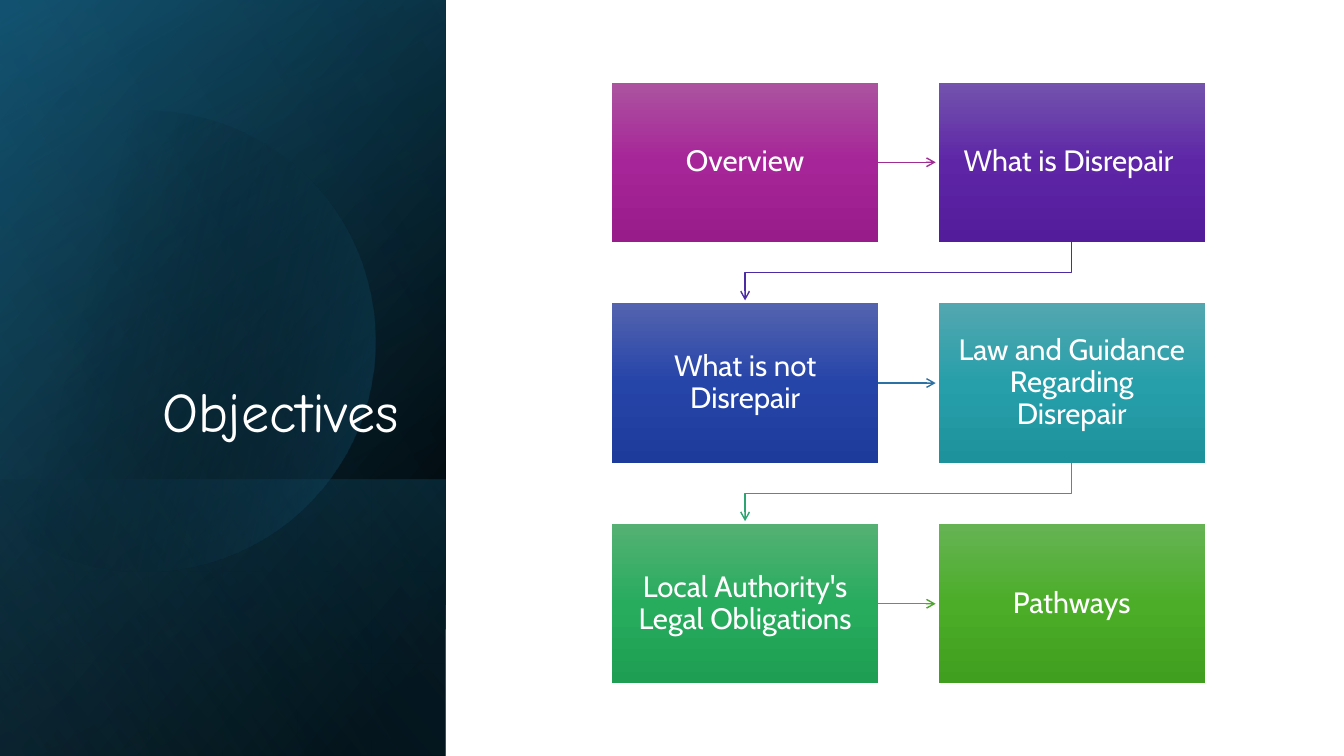
from dataclasses import dataclass
from lxml.etree import SubElement
from pptx import Presentation
from pptx.dml.color import RGBColor
from pptx.enum.shapes import MSO_CONNECTOR, MSO_SHAPE
from pptx.enum.text import MSO_ANCHOR, PP_ALIGN
from pptx.oxml.ns import qn
from pptx.util import Inches, Pt


@dataclass(frozen=True)
class Theme:
    white: str = "FFFFFF"
    black: str = "000000"
    navy: str = "104862"
    teal: str = "156082"
    sky: str = "46B1E1"
    title_font: str = "Comic Neue"
    title_size: int = 40
    body_font: str = "Cabin"
    body_size: int = 21
    line_width: int = 1


class Grid:
    """Two columns by three rows of boxes, in inches."""
    left, top = 6.07, 0.82
    box_w, box_h = 2.64, 1.58
    col_step, row_step = 3.24, 2.19
    tip_gap = 0.03

    def cell(self, i):
        row, col = divmod(i, 2)
        return self.left + col * self.col_step, self.top + row * self.row_step


class SlideBuilder:
    def __init__(self, slide, theme, grid):
        self.s, self.theme, self.grid = slide, theme, grid

    def gradient(self, sp, stops, angle):
        """Stops are (position %, colour, opacity %)."""
        sp.shadow.inherit = False
        sp.line.fill.background()
        sp.fill.background()
        old = sp.element.spPr.find(qn("a:noFill"))
        grad = old.makeelement(qn("a:gradFill"), {"rotWithShape": "1"})
        gs_lst = SubElement(grad, qn("a:gsLst"))
        for pos, colour, opacity in stops:
            gs = SubElement(gs_lst, qn("a:gs"), pos=str(pos * 1000))
            clr = SubElement(gs, qn("a:srgbClr"), val=colour)
            if opacity < 100:
                SubElement(clr, qn("a:alpha"), val=str(opacity * 1000))
        SubElement(grad, qn("a:lin"), ang=str(angle * 60000), scaled="0")
        sp.element.spPr.replace(old, grad)

    def panel(self, top, width, height, stops, angle):
        """Rectangle at the left edge, turned 90 degrees and mirrored."""
        x, y = (width - height) / 2, top + (height - width) / 2
        sp = self.s.shapes.add_shape(MSO_SHAPE.RECTANGLE, Inches(x), Inches(y),
                                     Inches(height), Inches(width))
        sp.rotation = 90
        sp.element.spPr.find(qn("a:xfrm")).set("flipH", "1")
        self.gradient(sp, stops, angle)

    def outline(self, points, close):
        pts = [(Inches(x), Inches(y)) for x, y in points]
        fb = self.s.shapes.build_freeform(*pts[0])
        fb.add_line_segments(pts[1:], close=close)
        return fb.convert_to_shape()

    def curved(self, start, curves, stops, angle, steps=24):
        """Closed outline; a curve is three points, a straight side is one."""
        pts = [start]
        for curve in curves:
            if len(curve) == 1:
                pts += curve
                continue
            p0, (p1, p2, p3) = pts[-1], curve
            for t in (k / steps for k in range(1, steps + 1)):
                u = 1 - t
                pts.append(tuple(u**3 * a + 3 * u * u * t * b + 3 * u * t * t * c + t**3 * d
                                 for a, b, c, d in zip(p0, p1, p2, p3)))
        self.gradient(self.outline(pts, True), stops, angle)

    def text(self, tf, words, font, size, align, anchor):
        tf.word_wrap = True
        tf.vertical_anchor = anchor
        p = tf.paragraphs[0]
        p.text = words
        p.alignment = align
        p.line_spacing = 0.9
        p.font.name, p.font.size = font, Pt(size)
        p.font.color.rgb = RGBColor.from_string(self.theme.white)

    def title(self, words, x, y, w, h):
        sp = self.s.shapes.add_textbox(Inches(x), Inches(y), Inches(w), Inches(h))
        self.text(sp.text_frame, words, self.theme.title_font, self.theme.title_size,
                  PP_ALIGN.RIGHT, MSO_ANCHOR.BOTTOM)

    def box(self, i, words, colours):
        g = self.grid
        x, y = g.cell(i)
        sp = self.s.shapes.add_shape(MSO_SHAPE.RECTANGLE, Inches(x), Inches(y),
                                     Inches(g.box_w), Inches(g.box_h))
        self.gradient(sp, [(50 * k, c, 100) for k, c in enumerate(colours)], 90)
        tf = sp.text_frame
        tf.margin_left = tf.margin_right = Inches(0.13)
        tf.margin_top = tf.margin_bottom = Inches(0.14)
        self.text(tf, words, self.theme.body_font, self.theme.body_size,
                  PP_ALIGN.CENTER, MSO_ANCHOR.MIDDLE)
        return sp

    def arrow_line(self, sp, colour):
        sp.line.color.rgb = RGBColor.from_string(colour)
        sp.line.width = Pt(self.theme.line_width)
        SubElement(sp.line._get_or_add_ln(), qn("a:tailEnd"), type="arrow")

    def across(self, i, box, colour):
        """Arrow from a left box to its right neighbour."""
        g = self.grid
        x, y = g.cell(i)
        mid = Inches(y + g.box_h / 2)
        cx = self.s.shapes.add_connector(MSO_CONNECTOR.STRAIGHT, Inches(x + g.box_w), mid,
                                         Inches(x + g.col_step - g.tip_gap), mid)
        cx.begin_connect(box, 3)
        self.arrow_line(cx, colour)
        SubElement(cx.element.spPr, qn("a:effectLst"))

    def down(self, i, colour):
        """Stepped arrow from a right box to the left box of the next row."""
        g = self.grid
        (x1, y1), (x2, y2) = g.cell(i), g.cell(i + 1)
        x1, x2, y1 = x1 + g.box_w / 2, x2 + g.box_w / 2, y1 + g.box_h
        mid = (y1 + y2) / 2
        sp = self.outline([(x1, y1), (x1, mid), (x2, mid), (x2, y2 - g.tip_gap)], False)
        sp.shadow.inherit = False
        sp.fill.background()
        self.arrow_line(sp, colour)


# Words, box gradient, colour of the arrow that leaves the box
STEPS = [
    ("Overview", ("AC53A0", "A62598", "991C8B"), "A02B93"),
    ("What is Disrepair ", ("7353AD", "5E26A7", "531C9A"), "4B2CA2"),
    ("What is not Disrepair", ("5363AF", "2645A9", "1D3B9B"), "2C71A4"),
    ("Law and Guidance Regarding Disrepair", ("53A7B0", "279FAA", "1D929D"), "2DA573"),
    ("Local Authority's Legal Obligations", ("54B173", "27AC5E", "1E9E52"), "4EA72E"),
    ("Pathways", ("66B354", "4BAD28", "409F1E"), None),
]
DISC_START = (1.49, 1.1)
DISC = [
    [(2.46, 1.12), (3.35, 1.77), (3.63, 2.75)],
    [(3.98, 3.97), (3.28, 5.23), (2.07, 5.58)],
    [(1.31, 5.8), (0.53, 5.61), (-0.03, 5.14)],
    [(-0.15, 5.03)],
    [(-0.15, 1.75)],
    [(0, 1.61)],
    [(0.23, 1.42), (0.5, 1.28), (0.8, 1.19)],
    [(1.03, 1.13), (1.26, 1.1), DISC_START],
]


def main():
    prs = Presentation()
    prs.slide_width, prs.slide_height = Inches(13.33), Inches(7.5)
    th = Theme()
    b = SlideBuilder(prs.slides.add_slide(prs.slide_layouts[6]), th, Grid())

    # Side panel with its layers of shade
    side_w, side_h, foot_h = 4.42, 7.5, 2.74
    b.panel(0, side_w, side_h, [(8, th.black, 100), (100, th.navy, 100)], 50)
    b.panel(0, side_w, side_h, [(0, th.black, 0), (99, th.teal, 46)], 30)
    b.panel(side_h - foot_h, side_w, foot_h, [(2, th.teal, 29), (100, th.black, 30)], 130)
    b.curved(DISC_START, DISC, [(29, th.black, 0), (100, th.teal, 43)], 14)
    b.panel(0, side_w, side_h, [(0, th.black, 0), (99, th.sky, 11)], 120)
    b.title("Objectives", 0.64, 1.84, 3.41, 2.62)

    # Steps and the arrows between them
    for i, (words, colours, arrow) in enumerate(STEPS):
        box = b.box(i, words, colours)
        if arrow and i % 2 == 0:
            b.across(i, box, arrow)
        elif arrow:
            b.down(i, arrow)

    prs.save("out.pptx")


if __name__ == "__main__":
    main()
